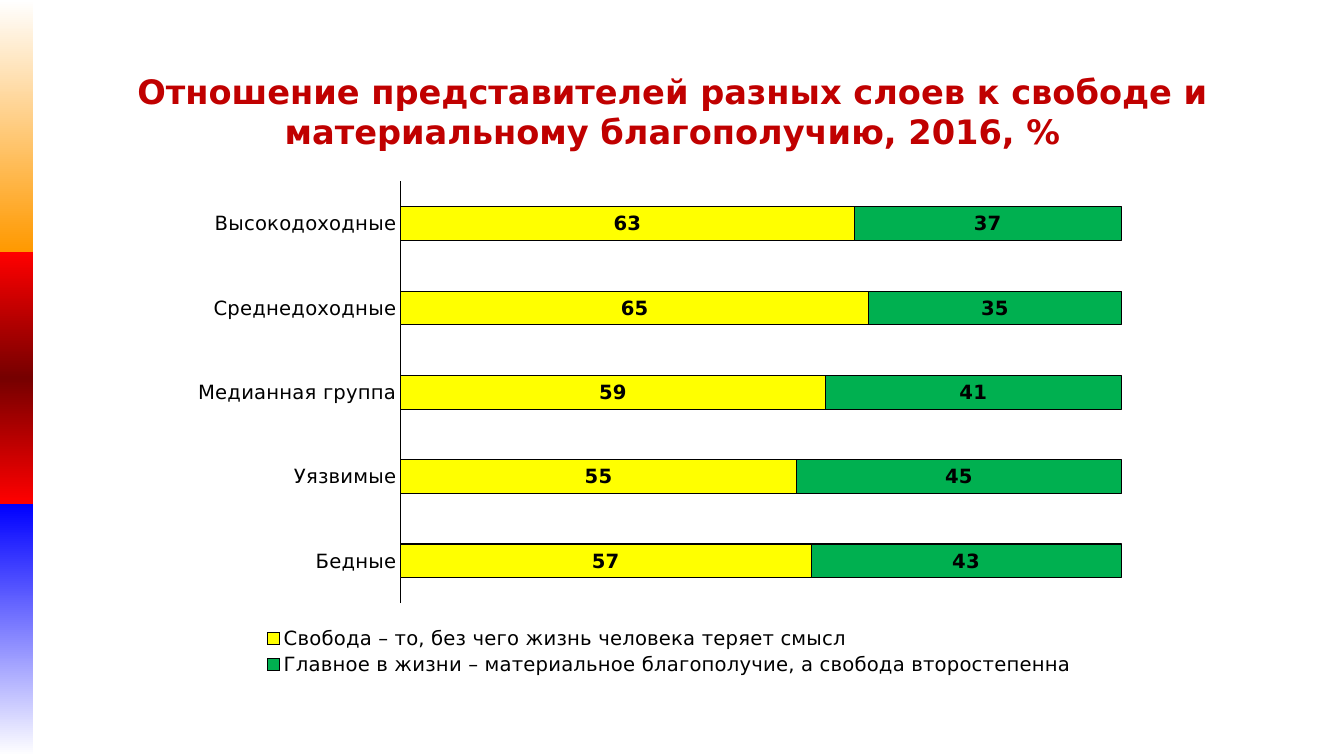
from lxml import etree
from pptx import Presentation
from pptx.chart.data import CategoryChartData
from pptx.dml.color import RGBColor
from pptx.enum.chart import XL_CHART_TYPE, XL_LABEL_POSITION, XL_LEGEND_POSITION, XL_TICK_MARK
from pptx.enum.shapes import MSO_SHAPE
from pptx.enum.text import MSO_ANCHOR, PP_ALIGN
from pptx.oxml.ns import qn
from pptx.util import Inches, Pt

STACKED_BAR = XL_CHART_TYPE.BAR_STACKED_100
LABEL_CENTER = XL_LABEL_POSITION.CENTER
LEGEND_BOTTOM = XL_LEGEND_POSITION.BOTTOM
NO_TICKS = XL_TICK_MARK.NONE
RECTANGLE = MSO_SHAPE.RECTANGLE
ANCHOR_BOTTOM = MSO_ANCHOR.BOTTOM
CENTER = PP_ALIGN.CENTER

FONT = "DejaVu Sans"
COLORS = {
    "white": "FFFFFF", "orange": "FF9900", "red": "FF0000", "maroon": "760000",
    "blue": "0000FF", "title": "C00000", "text": "000000",
    "freedom": "FFFF00", "wealth": "00B050",
}


def set_font(font, size, color="text", bold=False):
    font.name = FONT
    font.size = Pt(size)
    font.bold = bold
    font.color.rgb = RGBColor.from_string(COLORS[color])


def make_layout(x, y, width, height, inner=False):
    layout = etree.Element(qn("c:layout"))
    manual = etree.SubElement(layout, qn("c:manualLayout"))
    settings = [("layoutTarget", "inner")] if inner else []
    settings += [("xMode", "edge"), ("yMode", "edge"),
                 ("x", x), ("y", y), ("w", width), ("h", height)]
    for tag, value in settings:
        etree.SubElement(manual, qn(f"c:{tag}")).set("val", str(value))
    return layout


prs = Presentation()
prs.slide_width = Inches(13.33)
prs.slide_height = Inches(7.5)
slide = prs.slides.add_slide(prs.slide_layouts[5])

# Gradient strip down the left edge
STRIP = [("white", "orange"), ("red", "maroon", "red"), ("blue", "white")]
for row, stops in enumerate(STRIP):
    band = slide.shapes.add_shape(RECTANGLE, 0, Inches(2.5 * row), Inches(0.33), Inches(2.5))
    band.shadow.inherit = False
    band.line.fill.background()
    band.fill.gradient()
    band.fill.gradient_angle = 270
    stop_list = band.fill._fill._gradFill.find(qn("a:gsLst"))
    for old_stop in list(stop_list):
        stop_list.remove(old_stop)
    for i, color in enumerate(stops):
        stop = etree.SubElement(stop_list, qn("a:gs"), pos=str(100000 * i // (len(stops) - 1)))
        etree.SubElement(stop, qn("a:srgbClr"), val=COLORS[color])

# Title
title = slide.shapes.title
title.left, title.top = Inches(0.67), Inches(0.3)
title.width, title.height = Inches(12), Inches(1.25)
title.text_frame.vertical_anchor = ANCHOR_BOTTOM
heading = title.text_frame.paragraphs[0]
heading.alignment = CENTER
heading_run = heading.add_run()
heading_run.text = "Отношение представителей разных слоев к свободе и материальному благополучию, 2016, %"
set_font(heading_run.font, 24, "title", True)

# Attitudes by income group
attitudes = CategoryChartData(number_format="0")
attitudes.categories = ["Бедные", "Уязвимые", "Медианная группа", "Среднедоходные", "Высокодоходные"]
attitudes.add_series("Свобода – то, без чего жизнь человека теряет смысл", [57, 55, 59, 65, 63])
attitudes.add_series("Главное в жизни – материальное благополучие, а свобода второстепенна",
                     [43, 45, 41, 35, 37])
chart = slide.shapes.add_chart(STACKED_BAR, Inches(1.78), Inches(1.7),
                               Inches(9.53), Inches(5.04), attitudes).chart
chart.has_title = False
set_font(chart.font, 10)

plot = chart.plots[0]
plot.gap_width = 150
plot.overlap = 100
plot.vary_by_categories = False
for series, color in zip(plot.series, ("freedom", "wealth")):
    series.format.fill.solid()
    series.format.fill.fore_color.rgb = RGBColor.from_string(COLORS[color])
    series.format.line.color.rgb = RGBColor.from_string(COLORS["text"])
    series.format.line.width = Pt(0.75)
    labels = series.data_labels
    labels.show_value = True
    labels.position = LABEL_CENTER
    labels.number_format = "0"
    labels.number_format_is_linked = False
    set_font(labels.font, 14, bold=True)

# Axes
groups = chart.category_axis
groups.major_tick_mark = groups.minor_tick_mark = NO_TICKS
groups.format.line.color.rgb = RGBColor.from_string(COLORS["text"])
groups.format.line.width = Pt(0.75)
set_font(groups.tick_labels.font, 14)
chart.value_axis.has_major_gridlines = False
chart.value_axis.visible = False

# Legend below the bars, one entry per line
chart.has_legend = True
legend = chart.legend
legend.position = LEGEND_BOTTOM
legend.include_in_layout = False
set_font(legend.font, 14)

# Fixed places for the plot area and the legend, as shares of the chart
plot_area = plot._element.getparent()
for element in (plot_area, legend._element):
    for old_layout in element.findall(qn("c:layout")):
        element.remove(old_layout)
plot_area.insert(0, make_layout(0.23, 0.02, 0.75, 0.83, inner=True))
legend._element.find(qn("c:legendPos")).addnext(make_layout(0.08, 0.89, 0.86, 0.11))

prs.save("out.pptx")
